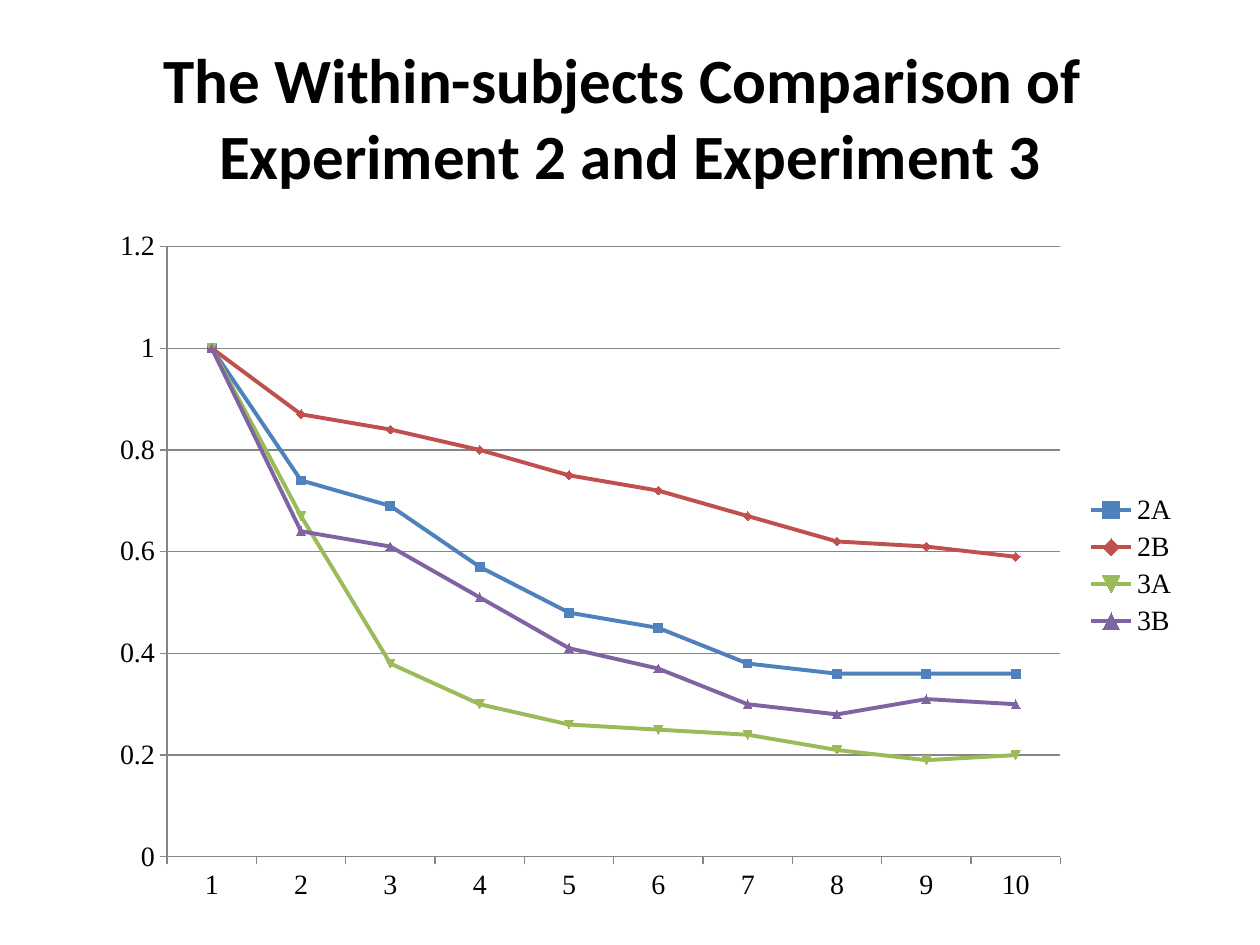
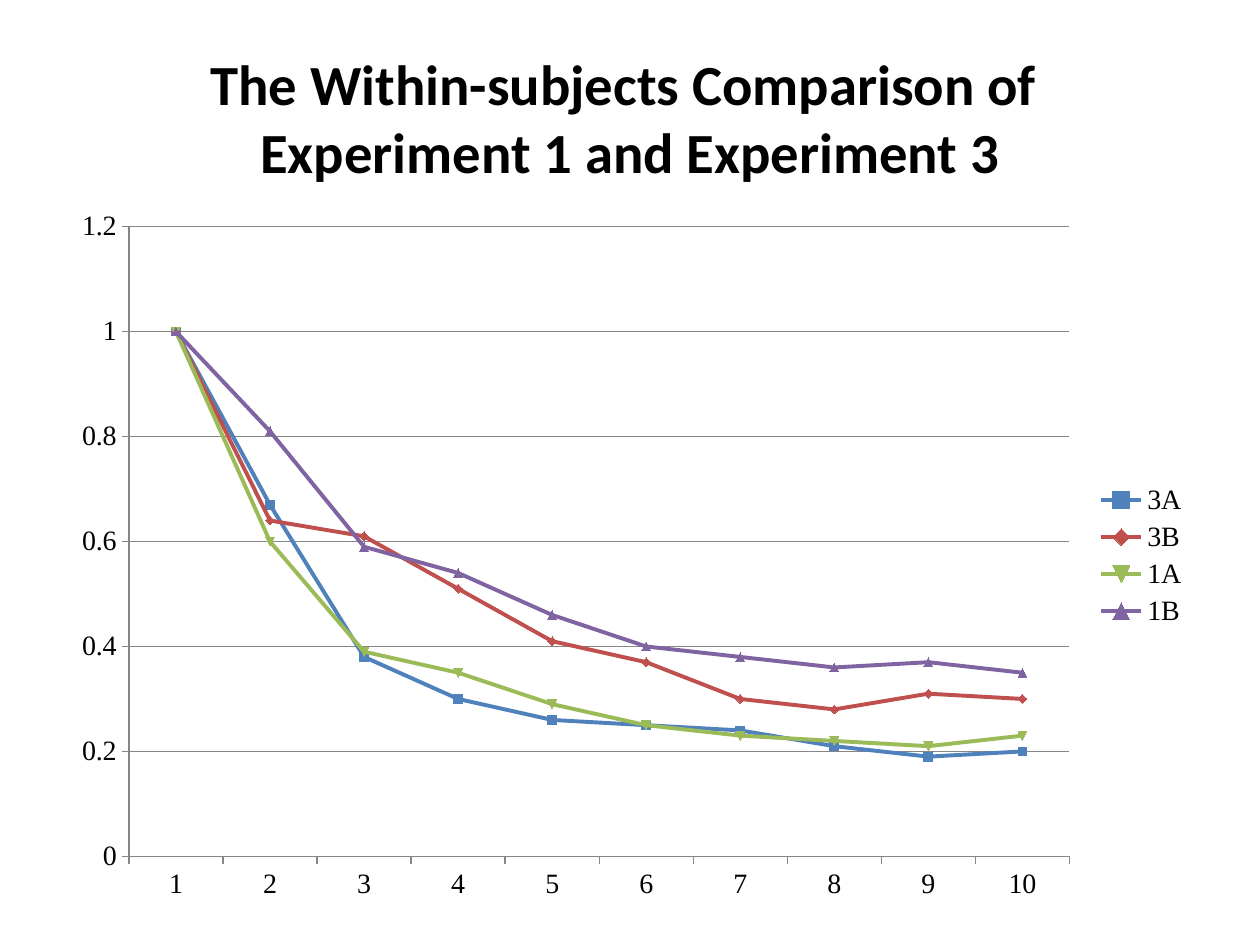
"""Build two slides that compare experiments with line charts."""
import dataclasses

import pptx
import pptx.chart.data
import pptx.dml.color
import pptx.enum.chart
import pptx.enum.text
import pptx.util

Inches = pptx.util.Inches
Pt = pptx.util.Pt

COLORS = {
    "paper": "FFFFFF",
    "text": "000000",
    "axis": "868686",
    "blue": "4F81BD",
    "red": "C0504D",
    "green": "9BBB59",
    "purple": "8064A2",
}
SERIES_COLORS = ("blue", "red", "green", "purple")
TITLE_FONT = "Calibri"
CHART_FONT = "Times New Roman"
CATEGORIES = [str(number) for number in range(1, 11)]
RESULTS = {
    "1A": (1, 0.6, 0.39, 0.35, 0.29, 0.25, 0.23, 0.22, 0.21, 0.23),
    "1B": (1, 0.81, 0.59, 0.54, 0.46, 0.4, 0.38, 0.36, 0.37, 0.35),
    "2A": (1, 0.74, 0.69, 0.57, 0.48, 0.45, 0.38, 0.36, 0.36, 0.36),
    "2B": (1, 0.87, 0.84, 0.8, 0.75, 0.72, 0.67, 0.62, 0.61, 0.59),
    "3A": (1, 0.67, 0.38, 0.3, 0.26, 0.25, 0.24, 0.21, 0.19, 0.2),
    "3B": (1, 0.64, 0.61, 0.51, 0.41, 0.37, 0.3, 0.28, 0.31, 0.3),
}


@dataclasses.dataclass(frozen=True)
class Area:
    """Position and size in inches."""

    left: float
    top: float
    width: float
    height: float

    def lengths(self) -> tuple:
        """Return the four values as lengths."""
        return tuple(Inches(value) for value in dataclasses.astuple(self))


@dataclasses.dataclass(frozen=True)
class Comparison:
    """One slide: its title, chart area and experiment groups."""

    title: str
    title_size: float
    chart_area: Area
    groups: tuple


TITLE_AREA = Area(0.5, 0.3, 9, 1.25)
COMPARISONS = (
    Comparison("The Within-subjects Comparison of \vExperiment 2 and Experiment 3",
               36, Area(0.78, 1.72, 8.67, 5.54), ("2A", "2B", "3A", "3B")),
    Comparison("The Within-subjects Comparison of \vExperiment 1 and Experiment 3",
               32.4, Area(0.47, 1.56, 9.06, 5.7), ("3A", "3B", "1A", "1B")),
)


def color(name: str) -> pptx.dml.color.RGBColor:
    """Look up a colour by name."""
    return pptx.dml.color.RGBColor.from_string(COLORS[name])


def style_font(font, name: str, size: float, bold: bool = False) -> None:
    """Set the typeface, size, weight and text colour."""
    font.name = name
    font.size = Pt(size)
    font.bold = bold
    font.color.rgb = color("text")


def style_line(line, name: str, width: float) -> None:
    """Set the colour and width of a line."""
    line.color.rgb = color(name)
    line.width = Pt(width)


def add_text(page, text: str, *, area: Area, font: str, size: float, bold: bool = False) -> None:
    """Add a centred, wrapping text box."""
    box = page.shapes.add_textbox(*area.lengths())
    frame = box.text_frame
    frame.word_wrap = True
    frame.vertical_anchor = pptx.enum.text.MSO_ANCHOR.MIDDLE
    para = frame.paragraphs[0]
    para.text = text
    para.alignment = pptx.enum.text.PP_ALIGN.CENTER
    for span in para.runs:
        style_font(span.font, font, size, bold)


def add_line_chart(page, area: Area, groups: tuple) -> None:
    """Add a line chart with one marked series for each group."""
    data = pptx.chart.data.CategoryChartData()
    data.categories = CATEGORIES
    for group in groups:
        data.add_series(group, RESULTS[group])
    kind = pptx.enum.chart.XL_CHART_TYPE.LINE_MARKERS
    chart = page.shapes.add_chart(kind, *area.lengths(), data).chart
    style_font(chart.font, CHART_FONT, 16)
    chart.has_title = False
    chart.has_legend = True
    chart.legend.position = pptx.enum.chart.XL_LEGEND_POSITION.RIGHT
    chart.legend.include_in_layout = False

    scale = chart.value_axis
    scale.minimum_scale, scale.maximum_scale, scale.major_unit = 0, 1.2, 0.2
    scale.tick_labels.number_format = "General"
    scale.tick_labels.number_format_is_linked = False
    scale.has_major_gridlines = True
    style_line(scale.major_gridlines.format.line, "axis", 0.75)
    for axis in (chart.category_axis, scale):
        axis.major_tick_mark = pptx.enum.chart.XL_TICK_MARK.OUTSIDE
        style_line(axis.format.line, "axis", 0.75)

    plot = chart.plots[0]
    plot.vary_by_categories = False
    for series, name in zip(plot.series, SERIES_COLORS):
        series.smooth = False
        style_line(series.format.line, name, 2.25)
        series.marker.size = 5
        series.marker.format.fill.solid()
        series.marker.format.fill.fore_color.rgb = color(name)


def add_comparison(deck, comparison: Comparison) -> None:
    """Add a slide with a title and its chart."""
    page = deck.slides.add_slide(deck.slide_layouts[6])
    page.background.fill.solid()
    page.background.fill.fore_color.rgb = color("paper")
    add_text(page, comparison.title, area=TITLE_AREA, font=TITLE_FONT,
             size=comparison.title_size, bold=True)
    add_line_chart(page, comparison.chart_area, comparison.groups)


def main() -> None:
    """Build and save the deck."""
    deck = pptx.Presentation()
    deck.slide_width, deck.slide_height = Inches(10), Inches(7.5)
    for comparison in COMPARISONS:
        add_comparison(deck, comparison)
    deck.save("out.pptx")


if __name__ == "__main__":
    main()
